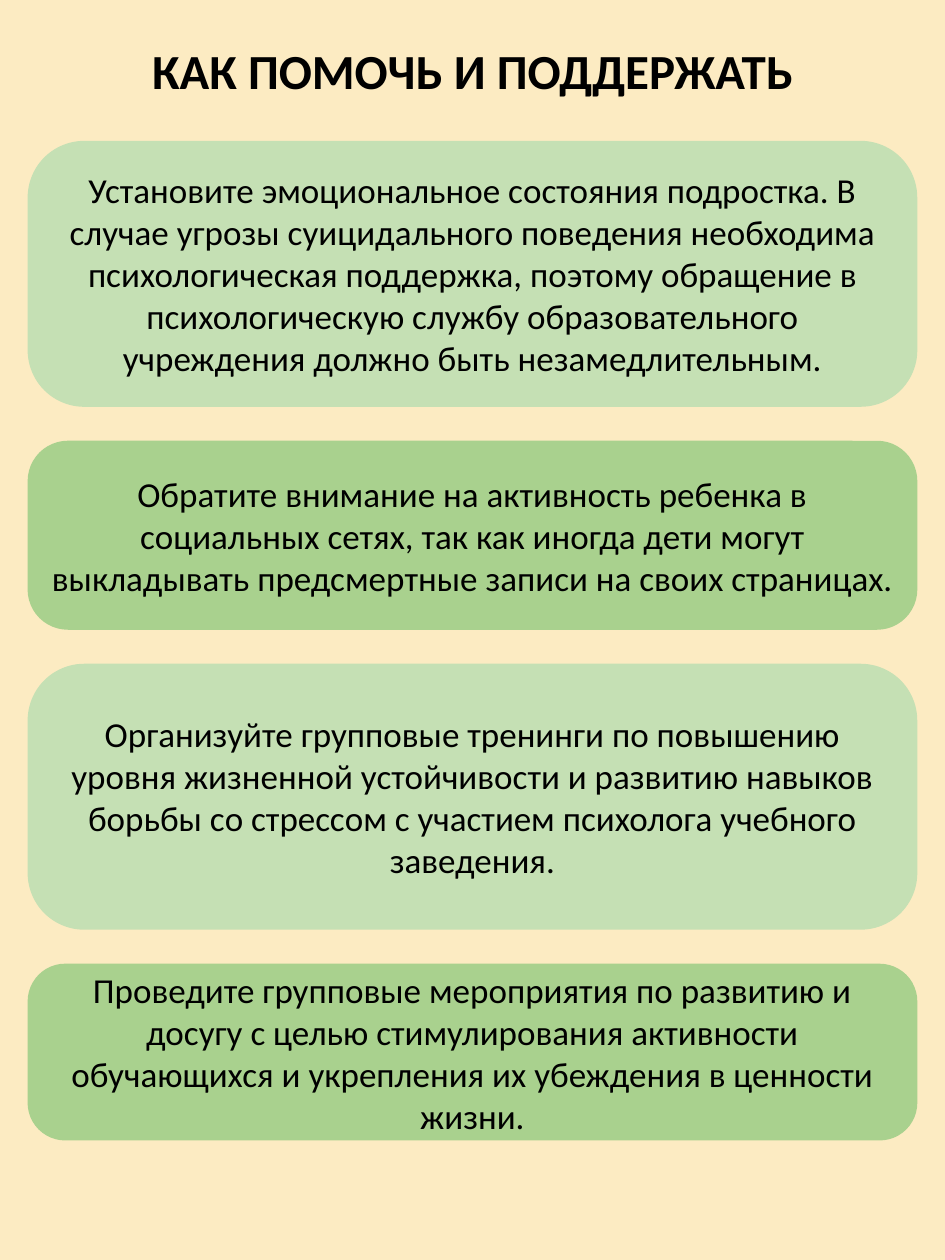
import pptx
import pptx.util
import pptx.dml.color
import pptx.enum.shapes
import pptx.enum.text

Pt = pptx.util.Pt
LIGHT, DARK = "C5E0B4", "A9D18E"
TITLE = "КАК ПОМОЧЬ И ПОДДЕРЖАТЬ"
# Card height, fill and text
CARDS = [
    (152, LIGHT, "Установите эмоциональное состояния подростка. В случае угрозы "
     "суицидального поведения необходима психологическая поддержка, поэтому "
     "обращение в психологическую службу образовательного учреждения "
     "должно быть незамедлительным."),
    (108, DARK, "Обратите внимание на активность ребенка в социальных сетях, "
     "так как иногда дети могут выкладывать предсмертные записи "
     "на своих страницах."),
    (152, LIGHT, "Организуйте групповые тренинги по повышению уровня жизненной "
     "устойчивости и развитию навыков борьбы со стрессом с участием "
     "психолога учебного заведения."),
    (101, DARK, "Проведите групповые мероприятия по развитию и досугу с целью "
     "стимулирования активности обучающихся и укрепления их убеждения "
     "в ценности жизни."),
]


def paint(fill, color):
    fill.solid()
    fill.fore_color.rgb = pptx.dml.color.RGBColor.from_string(color)


def write(shape, text, size, bold=False):
    frame = shape.text_frame
    frame.word_wrap = True
    frame.text = text
    line = frame.paragraphs[0]
    line.alignment = pptx.enum.text.PP_ALIGN.CENTER
    font = line.runs[0].font
    font.name, font.size, font.bold = "Calibri", Pt(size), bold
    paint(font.fill, "000000")


def add_title(slide, left, top, width, height):
    box = slide.shapes.add_textbox(Pt(left), Pt(top), Pt(width), Pt(height))
    write(box, TITLE, 28, True)
    box.text_frame.auto_size = pptx.enum.text.MSO_AUTO_SIZE.SHAPE_TO_FIT_TEXT


def add_cards(slide, left, top, width, gap):
    for height, color, text in CARDS:
        card = slide.shapes.add_shape(
            pptx.enum.shapes.MSO_SHAPE.ROUNDED_RECTANGLE,
            Pt(left), Pt(top), Pt(width), Pt(height))
        card.adjustments[0] = 0.213
        card.shadow.inherit = False
        paint(card.fill, color)
        card.line.fill.background()
        write(card, text, 20)
        card.text_frame.vertical_anchor = pptx.enum.text.MSO_ANCHOR.MIDDLE
        top += height + gap


def main():
    deck = pptx.Presentation()
    deck.slide_width, deck.slide_height = Pt(540), Pt(720)
    slide = deck.slides.add_slide(deck.slide_layouts[6])
    paint(slide.background.fill, "FCEBC2")

    # Stack of advice cards under the title
    add_cards(slide, 15.8, 80.5, 508.4, 19.4)
    add_title(slide, 15.8, 19.4, 508.4, 41)
    deck.save("out.pptx")


if __name__ == "__main__":
    main()
